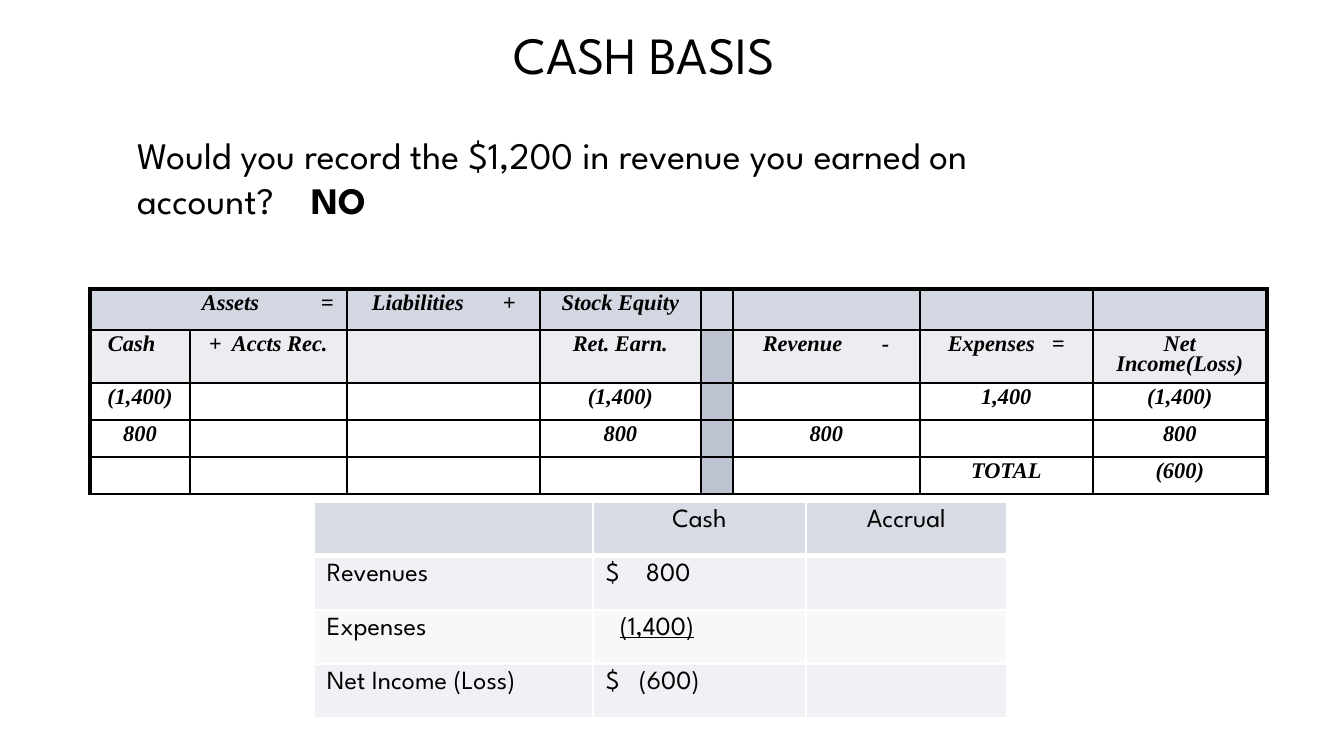
import pptx
import pptx.util
import pptx.dml.color
import pptx.enum.text
import pptx.oxml
import pptx.oxml.ns

RGB = pptx.dml.color.RGBColor
ALIGN = pptx.enum.text.PP_ALIGN
MID = pptx.enum.text.MSO_ANCHOR.MIDDLE
BLACK = RGB(0x00, 0x00, 0x00)
WHITE = RGB(0xFF, 0xFF, 0xFF)
HEAD = RGB(0xD3, 0xD7, 0xE1)
LABEL = RGB(0xEB, 0xED, 0xF1)
GAP = RGB(0xBE, 0xC3, 0xD2)
TOP = RGB(0xD8, 0xDB, 0xE4)
ODD = RGB(0xF0, 0xF1, 0xF5)
EVEN = RGB(0xF8, 0xF8, 0xFA)
SANS, SERIF = "League Spartan", "Times New Roman"


def px(n):
    return pptx.util.Emu(round(n * 914400 / 134.4))


class Page:
    def __init__(self, deck):
        self.slide = deck.slides.add_slide(deck.slide_layouts[5])

    def style(self, para, face, size, align=ALIGN.LEFT, tab=None, bold=None, slant=None):
        para.alignment = align
        if tab:
            prop = para._p.get_or_add_pPr()
            stops = pptx.oxml.parse_xml(
                f'<a:tabLst {pptx.oxml.ns.nsdecls("a")}>'
                f'<a:tab pos="{px(tab)}" algn="l"/></a:tabLst>')
            prop.append(stops)
        font = para.font
        font.name, font.size = face, pptx.util.Pt(size)
        font.bold, font.italic = bold, slant
        font.color.rgb = BLACK

    def frame(self, shape):
        text = shape.text_frame
        text.word_wrap = True
        text.auto_size = pptx.enum.text.MSO_AUTO_SIZE.NONE
        text.vertical_anchor = MID
        return text.paragraphs[0]

    def title(self, words, left, top, wide, high):
        shape = self.slide.shapes.title
        shape.left, shape.top, shape.width, shape.height = map(px, (left, top, wide, high))
        para = self.frame(shape)
        para.text = words
        self.style(para, SANS, 28, ALIGN.CENTER)

    def text(self, words, strong, left, top, wide, high, tab):
        shape = self.slide.shapes.add_textbox(*map(px, (left, top, wide, high)))
        para = self.frame(shape)
        para.add_run().text = words
        run = para.add_run()
        run.text = strong
        run.font.bold = True
        self.style(para, SANS, 20, tab=tab)

    def edge(self, cell, side, color, width):
        line = pptx.oxml.parse_xml(
            f'<a:ln{side} {pptx.oxml.ns.nsdecls("a")} w="{pptx.util.Pt(width)}">'
            f'<a:solidFill><a:srgbClr val="{color}"/></a:solidFill></a:ln{side}>')
        return line

    def cell(self, cell, words, fill, lines, pad, color, place, spacing=None, **look):
        """Lines are the widths of the left, right, top and bottom edges."""
        indent, tab = place
        cell.margin_left, cell.margin_right = px(indent), px(13)
        cell.margin_top = cell.margin_bottom = px(pad)
        para = cell.text_frame.paragraphs[0]
        para.text = words
        if spacing:
            para.line_spacing = spacing
        self.style(para, tab=tab, **look)
        if not words:
            end = pptx.oxml.parse_xml(
                f'<a:endParaRPr {pptx.oxml.ns.nsdecls("a")} sz="{look["size"] * 100}"/>')
            para._p.append(end)
        if fill is None:
            cell.fill.background()
        else:
            cell.fill.solid()
            cell.fill.fore_color.rgb = fill
        prop = cell._tc.get_or_add_tcPr()
        for spot, (side, width) in enumerate(zip("LRTB", lines)):
            prop.insert(spot, self.edge(cell, side, color, width))

    def table(self, left, top, cols, rows):
        shape = self.slide.shapes.add_table(
            len(rows), len(cols), *map(px, (left, top, sum(cols), sum(rows))))
        grid = shape.table
        grid.first_row = grid.horz_banding = False
        for col, wide in zip(grid.columns, cols):
            col.width = px(wide)
        for row, high in zip(grid.rows, rows):
            row.height = px(high)
        return grid


def ledger(page):
    data = [
        ["Assets\t=", "", "Liabilities\t+", "Stock Equity", "", "", "", ""],
        ["Cash", "+\tAccts Rec.", "", "Ret. Earn.", "", "Revenue\t-",
         "Expenses\t=", "Net Income(Loss)"],
        ["(1,400)", "", "", "(1,400)", "", "", "1,400", "(1,400)"],
        ["800", "", "", "800", "", "800", "", "800"],
        ["", "", "", "", "", "", "TOTAL", "(600)"],
    ]
    # Left inset and tab stop of the cells that are not centred
    places = {(0, 0): (112, 119), (0, 2): (25, 131), (1, 0): (18, None),
              (1, 1): (19, 23), (1, 5): (30, 119), (1, 6): (28, 104)}
    grid = page.table(90, 289, [100, 157, 193, 161, 32, 187, 173, 174],
                      [41, 53, 37, 37, 37])
    grid.cell(0, 0).merge(grid.cell(0, 1))
    for r, row in enumerate(data):
        for c, words in enumerate(row):
            fill = HEAD if r == 0 else GAP if c == 4 else LABEL if r == 1 else None
            lines = (2.25 if c == 0 else 1, 2.25 if c == 7 else 1,
                     2.25 if r == 0 else 1, 1)
            align = ALIGN.LEFT if (r, c) in places else ALIGN.CENTER
            page.cell(grid.cell(r, c), words, fill, lines, 6, BLACK,
                      places.get((r, c), (13, None)), spacing=0.8, face=SERIF,
                      size=12, align=align, bold=True, slant=True)


def income(page):
    data = [
        ["", "Cash", "Accrual"],
        ["Revenues", "$\t800", ""],
        ["Expenses", "(1,400)", ""],
        ["Net Income (Loss)", "$\t(600)", ""],
    ]
    places = {(1, 1): (13, 40), (2, 1): (27, None), (3, 1): (13, 33)}
    grid = page.table(314, 502, [279, 213, 201], [54] * 4)
    for r, row in enumerate(data):
        for c, words in enumerate(row):
            page.cell(grid.cell(r, c), words, (TOP, ODD, EVEN, ODD)[r],
                      (1, 1, 3 if r == 1 else 1, 3 if r == 0 else 1), 7, WHITE,
                      places.get((r, c), (13, None)), face=SANS, size=14,
                      align=ALIGN.LEFT if r else ALIGN.CENTER)
    grid.cell(2, 1).text_frame.paragraphs[0].font.underline = True


def main():
    deck = pptx.Presentation()
    deck.slide_width, deck.slide_height = px(1344), px(756)
    page = Page(deck)

    # Title and question
    page.title("CASH BASIS", 375, 15, 538, 77)
    page.text("Would you record the $1,200 in revenue you earned on account?\t",
              "NO", 124, 132, 974, 90, 174)

    # Accounting equation, then the comparison of the two methods
    ledger(page)
    income(page)
    deck.save("out.pptx")


if __name__ == "__main__":
    main()
